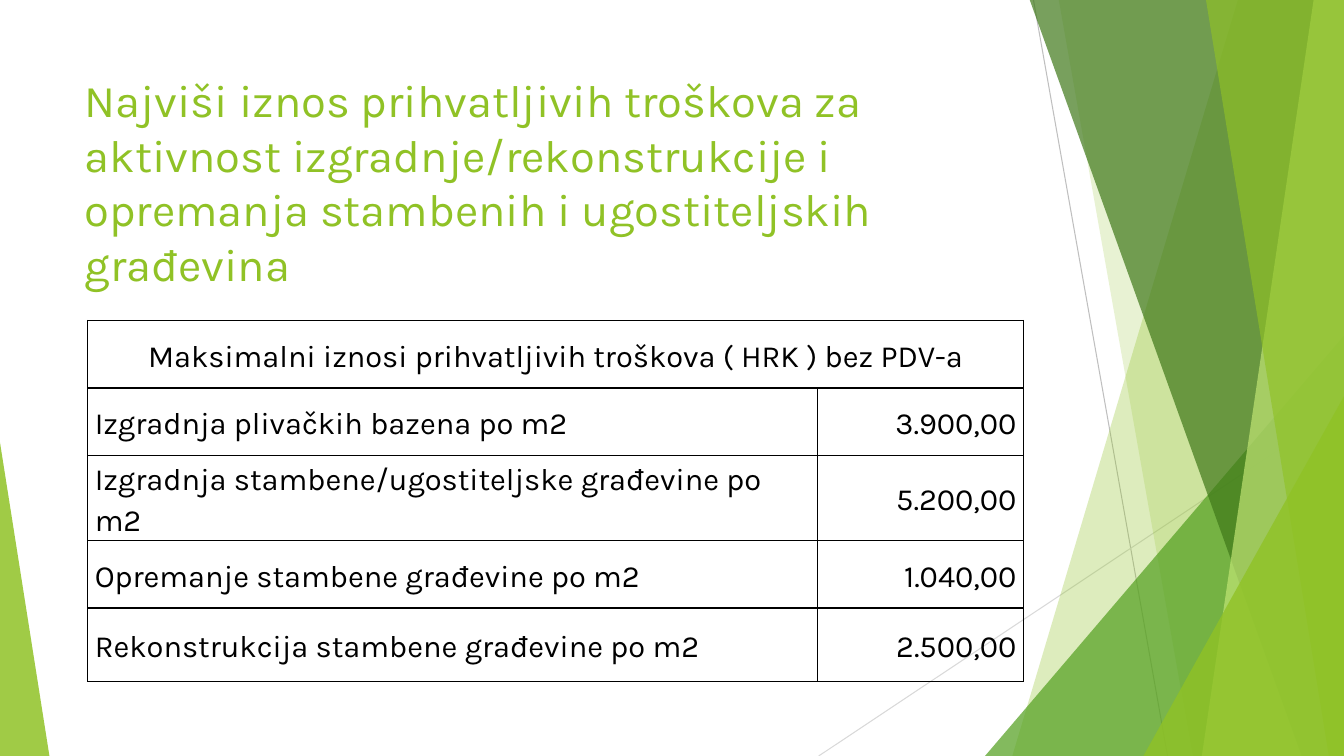
from dataclasses import dataclass

from lxml import etree
from pptx import Presentation
from pptx import util as u
from pptx.dml.color import RGBColor
from pptx.enum import shapes as es, text as et
from pptx.oxml import ns

Inches, Pt = u.Inches, u.Pt
WIDTH, HEIGHT, BLEED = 13.33, 7.5, -0.01


@dataclass(frozen=True)
class Theme:
    font: str = "Karla"
    title_size: float = 32.4
    table_size: float = 22
    ink: str = "000000"
    lime: str = "90C226"
    pale_lime: str = "C0E474"
    leaf: str = "54A021"
    forest: str = "3F7819"
    ray: str = "BFBFBF"
    pale_ray: str = "D9D9D9"


@dataclass(frozen=True)
class Ray:
    start: tuple[float, float]
    end: tuple[float, float]
    color: str


@dataclass(frozen=True)
class Facet:
    """Band from a slanted left edge to the right side of the slide."""
    top_x: float
    bottom_x: float
    color: str
    opacity: int


@dataclass(frozen=True)
class Corner:
    """Triangle standing on the bottom of the slide, apex at one side."""
    left: float
    top: float
    width: float
    apex: int
    color: str
    opacity: int


@dataclass(frozen=True)
class Cost:
    activity: str
    limit: str


THEME = Theme()
RAYS = [
    Ray((10.25, 0), (11.58, HEIGHT), THEME.ray),
    Ray((WIDTH, 4.03), (8.12, HEIGHT), THEME.pale_ray),
]
BACKDROP = [
    Facet(12.28, 10.04, THEME.lime, 30),
    Facet(10.5, 11.83, THEME.lime, 20),
    Corner(9.77, 3.33, 3.56, 1, THEME.leaf, 72),
    Facet(10.21, 12.91, THEME.forest, 70),
    Facet(13.03, 11.92, THEME.pale_lime, 70),
    Facet(11.96, 13.18, THEME.lime, 65),
    Corner(11.34, 3.93, 1.99, 1, THEME.lime, 80),
    Corner(0, 4.39, 0.49, 0, THEME.lime, 85),
]
TITLE = ("Najviši iznos prihvatljivih troškova za aktivnost izgradnje/rekonstrukcije "
         "i opremanja stambenih i ugostiteljskih građevina")
TABLE_HEADING = "Maksimalni iznosi prihvatljivih troškova ( HRK ) bez PDV-a"
COSTS = [
    Cost("Izgradnja plivačkih bazena po m2", "3.900,00"),
    Cost("Izgradnja stambene/ugostiteljske građevine po m2", "5.200,00"),
    Cost("Opremanje stambene građevine po m2", "1.040,00"),
    Cost("Rekonstrukcija stambene građevine po m2", "2.500,00"),
]
COLUMN_WIDTHS = [7.24, 2.04]
ROW_HEIGHTS = [0.67] * 4 + [0.73]


def add_run(paragraph, wording: str, size: float, color: str) -> None:
    run = paragraph.add_run()
    run.text = wording
    run.font.name = THEME.font
    run.font.size = Pt(size)
    run.font.color.rgb = RGBColor.from_string(color)


def draw_ray(slide, ray: Ray) -> None:
    points = [Inches(value) for value in (*ray.start, *ray.end)]
    line = slide.shapes.add_connector(es.MSO_CONNECTOR.STRAIGHT, *points)
    line.line.color.rgb = RGBColor.from_string(ray.color)
    line.line.width = Pt(0.75)
    etree.SubElement(line._element.spPr, ns.qn("a:effectLst"))


def paint(shape, color: str, opacity: int) -> None:
    shape.shadow.inherit = False
    shape.line.fill.background()
    shape.fill.solid()
    shape.fill.fore_color.rgb = RGBColor.from_string(color)
    tint = shape._element.spPr.find(".//" + ns.qn("a:srgbClr"))
    etree.SubElement(tint, ns.qn("a:alpha"), val=str(opacity * 1000))


def draw_facet(slide, facet: Facet) -> None:
    corners = [(facet.top_x, BLEED), (WIDTH, BLEED), (WIDTH, HEIGHT), (facet.bottom_x, HEIGHT)]
    start, *others = [(Inches(x), Inches(y)) for x, y in corners]
    outline = slide.shapes.build_freeform(*start)
    outline.add_line_segments(others, close=True)
    paint(outline.convert_to_shape(), facet.color, facet.opacity)


def draw_corner(slide, corner: Corner) -> None:
    triangle = slide.shapes.add_shape(
        es.MSO_SHAPE.ISOSCELES_TRIANGLE, Inches(corner.left), Inches(corner.top),
        Inches(corner.width), Inches(HEIGHT - corner.top))
    triangle.adjustments[0] = corner.apex
    paint(triangle, corner.color, corner.opacity)


def draw_title(slide) -> None:
    title = slide.shapes.add_textbox(Inches(0.74), Inches(0.67), Inches(9.4), Inches(2.33))
    frame = title.text_frame
    frame.word_wrap = True
    frame.vertical_anchor = et.MSO_ANCHOR.TOP
    add_run(frame.paragraphs[0], TITLE, THEME.title_size, THEME.lime)


def add_borders(cell) -> None:
    properties = cell._tc.get_or_add_tcPr()
    for position, side in enumerate(("a:lnL", "a:lnR", "a:lnT", "a:lnB")):
        border = etree.Element(ns.qn(side), w=str(Pt(1)))
        fill = etree.SubElement(border, ns.qn("a:solidFill"))
        etree.SubElement(fill, ns.qn("a:srgbClr"), val=THEME.ink)
        properties.insert(position, border)


def fill_cell(cell, wording: str, alignment: et.PP_ALIGN) -> None:
    paragraph = cell.text_frame.paragraphs[0]
    paragraph.alignment = alignment
    paragraph.line_spacing = 1.15
    add_run(paragraph, wording, THEME.table_size, THEME.ink)


def draw_costs(slide) -> None:
    table = slide.shapes.add_table(
        len(ROW_HEIGHTS), len(COLUMN_WIDTHS), Inches(0.87), Inches(3.18),
        Inches(sum(COLUMN_WIDTHS)), Inches(sum(ROW_HEIGHTS))).table
    table.first_row = table.horz_banding = False
    for column, width in zip(table.columns, COLUMN_WIDTHS):
        column.width = Inches(width)
    for row, height in zip(table.rows, ROW_HEIGHTS):
        row.height = Inches(height)
    for cell in table.iter_cells():
        cell.fill.background()
        cell.vertical_anchor = et.MSO_ANCHOR.MIDDLE
        cell.margin_left = cell.margin_right = Inches(0.07)
        cell.margin_top = cell.margin_bottom = 0
        add_borders(cell)

    heading = table.cell(0, 0)
    heading.merge(table.cell(0, 1))
    fill_cell(heading, TABLE_HEADING, et.PP_ALIGN.CENTER)
    for row, cost in enumerate(COSTS, start=1):
        fill_cell(table.cell(row, 0), cost.activity, et.PP_ALIGN.LEFT)
        fill_cell(table.cell(row, 1), cost.limit, et.PP_ALIGN.RIGHT)


def main() -> None:
    deck = Presentation()
    deck.slide_width, deck.slide_height = Inches(WIDTH), Inches(HEIGHT)
    slide = deck.slides.add_slide(deck.slide_layouts[6])
    for ray in RAYS:
        draw_ray(slide, ray)
    for piece in BACKDROP:
        if isinstance(piece, Facet):
            draw_facet(slide, piece)
        else:
            draw_corner(slide, piece)
    draw_title(slide)
    draw_costs(slide)
    deck.save("out.pptx")


if __name__ == "__main__":
    main()
